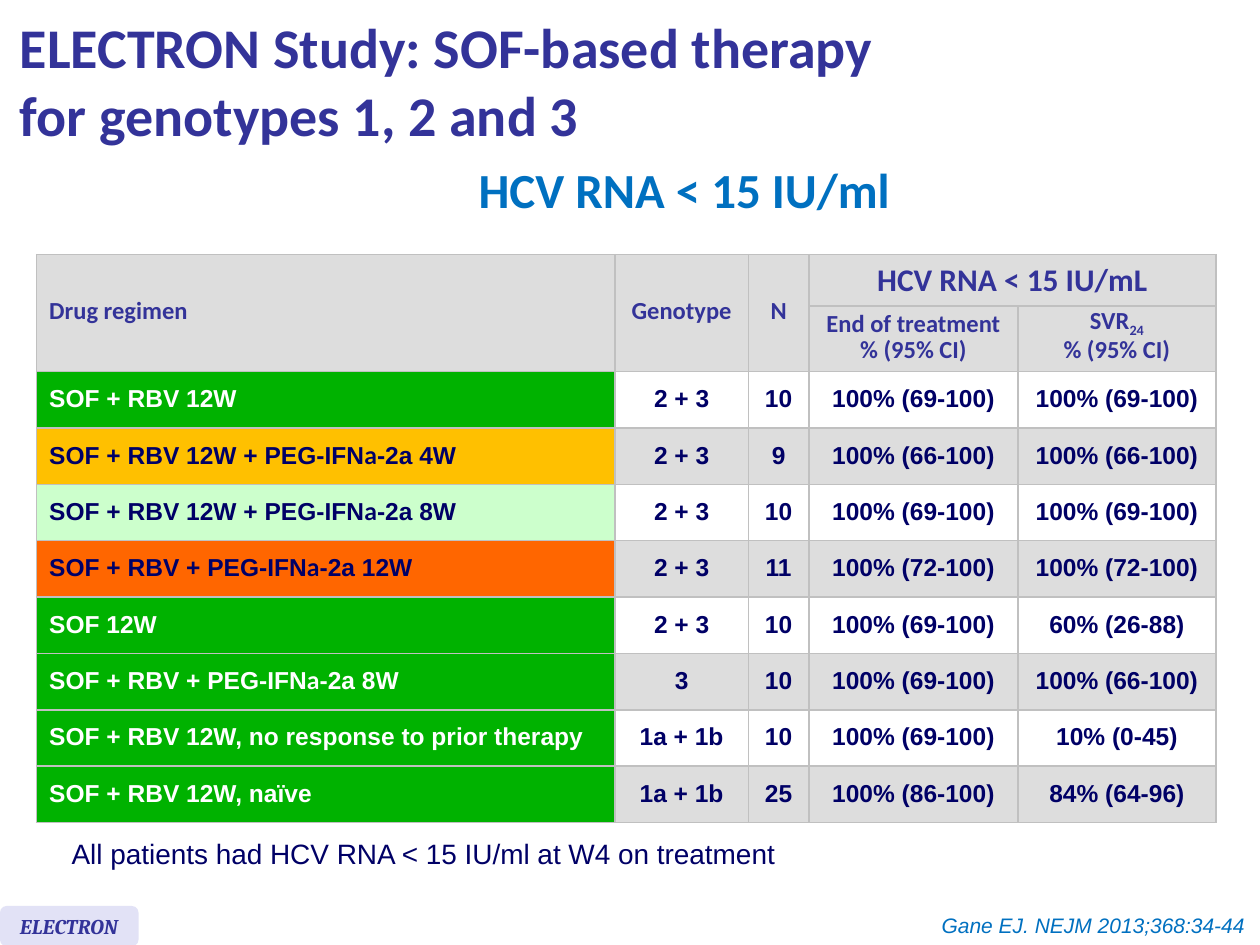
import pptx
import pptx.dml.color
import pptx.enum.shapes
import pptx.enum.text
import pptx.oxml
import pptx.oxml.ns
import pptx.util
from pptx.util import Inches

RGBColor = pptx.dml.color.RGBColor
ALIGN = pptx.enum.text.PP_ALIGN
ANCHOR = pptx.enum.text.MSO_ANCHOR

INDIGO = RGBColor(0x33, 0x33, 0x99)
NAVY = RGBColor(0x00, 0x00, 0x66)
BLUE = RGBColor(0x00, 0x70, 0xC0)
LAVENDER = RGBColor(0xE2, 0xE2, 0xF6)
WHITE = RGBColor(0xFF, 0xFF, 0xFF)
GRAY = RGBColor(0xDD, 0xDD, 0xDD)
GREEN = RGBColor(0x00, 0xB2, 0x00)
AMBER = RGBColor(0xFF, 0xC0, 0x00)
MINT = RGBColor(0xCC, 0xFF, 0xCC)
ORANGE = RGBColor(0xFF, 0x66, 0x00)
BORDER = "C0C0C0"

COLUMN_WIDTHS = [4.59, 1.06, 0.48, 1.66, 1.57]
HEADER_HEIGHTS = [0.41, 0.52]
# A regimen is a list of parts; the alpha letter between parts uses its own font
REGIMENS = [
    (GREEN, ["SOF + RBV 12W"], "2 + 3", "10", "100% (69-100)", "100% (69-100)"),
    (AMBER, ["SOF + RBV 12W + PEG-IFN", "-2a 4W"], "2 + 3", "9", "100% (66-100)", "100% (66-100)"),
    (MINT, ["SOF + RBV 12W + PEG-IFN", "-2a 8W"], "2 + 3", "10", "100% (69-100)", "100% (69-100)"),
    (ORANGE, ["SOF + RBV + PEG-IFN", "-2a 12W"], "2 + 3", "11", "100% (72-100)", "100% (72-100)"),
    (GREEN, ["SOF 12W"], "2 + 3", "10", "100% (69-100)", "60% (26-88)"),
    (GREEN, ["SOF + RBV + PEG-IFN", "-2a 8W"], "3", "10", "100% (69-100)", "100% (66-100)"),
    (GREEN, ["SOF + RBV 12W, no response to prior therapy"], "1a + 1b", "10", "100% (69-100)", "10% (0-45)"),
    (GREEN, ["SOF + RBV 12W, naïve"], "1a + 1b", "25", "100% (86-100)", "84% (64-96)"),
]


def add_run(paragraph, text, size, font, color, bold=False, italic=False):
    run = paragraph.add_run()
    run.text = text
    run.font.size = pptx.util.Pt(size)
    run.font.name = font
    run.font.color.rgb = color
    run.font.bold = bold
    run.font.italic = italic
    return run


def add_text(slide, box, lines, size, font, color, align=ALIGN.LEFT,
             anchor=ANCHOR.TOP, wrap=True, bold=False, italic=False):
    shape = slide.shapes.add_textbox(*[Inches(length) for length in box])
    frame = shape.text_frame
    frame.word_wrap = wrap
    frame.vertical_anchor = anchor
    paragraph = frame.paragraphs[0]
    paragraph.alignment = align
    for index, line in enumerate(lines):
        if index:
            paragraph.add_line_break()
        add_run(paragraph, line, size, font, color, bold, italic)


def style_cell(cell, fill):
    properties = cell._tc.get_or_add_tcPr()
    for side in ("lnL", "lnR", "lnT", "lnB"):
        properties.append(pptx.oxml.parse_xml(
            f'<a:{side} {pptx.oxml.ns.nsdecls("a")} w="12700"><a:solidFill>'
            f'<a:srgbClr val="{BORDER}"/></a:solidFill></a:{side}>'))
    cell.fill.solid()
    cell.fill.fore_color.rgb = fill
    cell.vertical_anchor = ANCHOR.MIDDLE


def cell_paragraph(cell, column, first=True):
    frame = cell.text_frame
    paragraph = frame.paragraphs[0] if first else frame.add_paragraph()
    paragraph.alignment = ALIGN.CENTER if column else ALIGN.LEFT
    paragraph.line_spacing = pptx.util.Pt(15)
    return paragraph


def fill_header(table):
    for column, label in enumerate(["Drug regimen", "Genotype", "N"]):
        cell = table.cell(0, column)
        cell.merge(table.cell(1, column))
        add_run(cell_paragraph(cell, column), label, 14, "Calibri", INDIGO, True)

    response = table.cell(0, 3)
    response.merge(table.cell(0, 4))
    paragraph = cell_paragraph(response, 3)
    paragraph.line_spacing = 1.0
    add_run(paragraph, "HCV RNA < 15 IU/mL", 18, "Calibri", INDIGO, True)

    for column, label, subscript in [(3, "End of treatment", ""), (4, "SVR", "24")]:
        cell = table.cell(1, column)
        paragraph = cell_paragraph(cell, column)
        add_run(paragraph, label, 14, "Calibri", INDIGO, True)
        if subscript:
            run = add_run(paragraph, subscript, 14, "Calibri", INDIGO, True)
            run.font._element.set("baseline", "-25000")
        add_run(cell_paragraph(cell, column, first=False), "% (95% CI)",
                14, "Calibri", INDIGO, True)


def fill_regimen(table, row, regimen):
    fill, parts, *values = regimen
    color = WHITE if fill == GREEN else NAVY
    paragraph = cell_paragraph(table.cell(row, 0), 0)
    for index, part in enumerate(parts):
        if index:
            add_run(paragraph, "a", 14, "Lato", color, True)
        add_run(paragraph, part, 14, "Arial", color, True)
    for column, value in enumerate(values, start=1):
        add_run(cell_paragraph(table.cell(row, column), column), value,
                14, "Arial", NAVY, True)


def add_results_table(slide, left, top, width, height):
    row_count = len(HEADER_HEIGHTS) + len(REGIMENS)
    table = slide.shapes.add_table(
        row_count, len(COLUMN_WIDTHS), Inches(left), Inches(top),
        Inches(width), Inches(height)).table
    table.first_row = False
    table.horz_banding = False
    for column, column_width in zip(table.columns, COLUMN_WIDTHS):
        column.width = Inches(column_width)
    body_height = (height - sum(HEADER_HEIGHTS)) / len(REGIMENS)
    row_heights = HEADER_HEIGHTS + [body_height] * len(REGIMENS)

    for row, row_height in enumerate(row_heights):
        table.rows[row].height = Inches(row_height)
        for column in range(len(COLUMN_WIDTHS)):
            fill = WHITE if row >= 2 and row % 2 == 0 else GRAY
            if row >= 2 and column == 0:
                fill = REGIMENS[row - 2][0]
            style_cell(table.cell(row, column), fill)

    fill_header(table)
    for row, regimen in enumerate(REGIMENS, start=len(HEADER_HEIGHTS)):
        fill_regimen(table, row, regimen)


def add_study_tag(slide, left, top, width, height):
    shape = slide.shapes.add_shape(
        pptx.enum.shapes.MSO_SHAPE.ROUNDED_RECTANGLE,
        Inches(left), Inches(top), Inches(width), Inches(height))
    shape.shadow.inherit = False
    shape.fill.solid()
    shape.fill.fore_color.rgb = LAVENDER
    shape.line.fill.background()
    add_text(slide, (left + 0.06, top + 0.01, width + 0.25, 0.3), ["ELECTRON"],
             12, "Cambria", INDIGO, bold=True, italic=True)


def main():
    presentation = pptx.Presentation()
    presentation.slide_width = Inches(10)
    presentation.slide_height = Inches(7.5)
    slide = presentation.slides.add_slide(presentation.slide_layouts[6])

    # Results table with its heading and note
    add_results_table(slide, 0.29, 2.02, 9.36, 4.51)
    add_text(slide, (1.06, 1.22, 8.74, 0.57), ["HCV RNA < 15 IU/ml"],
             28, "Calibri", BLUE, align=ALIGN.CENTER, bold=True)
    add_text(slide, (0.47, 6.59, 5.92, 0.37),
             ["All patients had HCV RNA < 15 IU/ml at W4 on treatment"],
             16, "Arial", NAVY, wrap=False)

    # Title
    add_text(slide, (0.06, 0.03, 9.83, 1.21),
             ["ELECTRON Study: SOF-based therapy", "for genotypes 1, 2 and 3"],
             32, "Calibri", INDIGO, anchor=ANCHOR.MIDDLE, bold=True)

    # Footer
    add_study_tag(slide, 0, 7.19, 1.1, 0.32)
    add_text(slide, (6.17, 7.19, 3.81, 0.3), ["Gane EJ. NEJM 2013;368:34-44"],
             12, "Arial", BLUE, align=ALIGN.RIGHT, italic=True)

    presentation.save("out.pptx")


if __name__ == "__main__":
    main()
